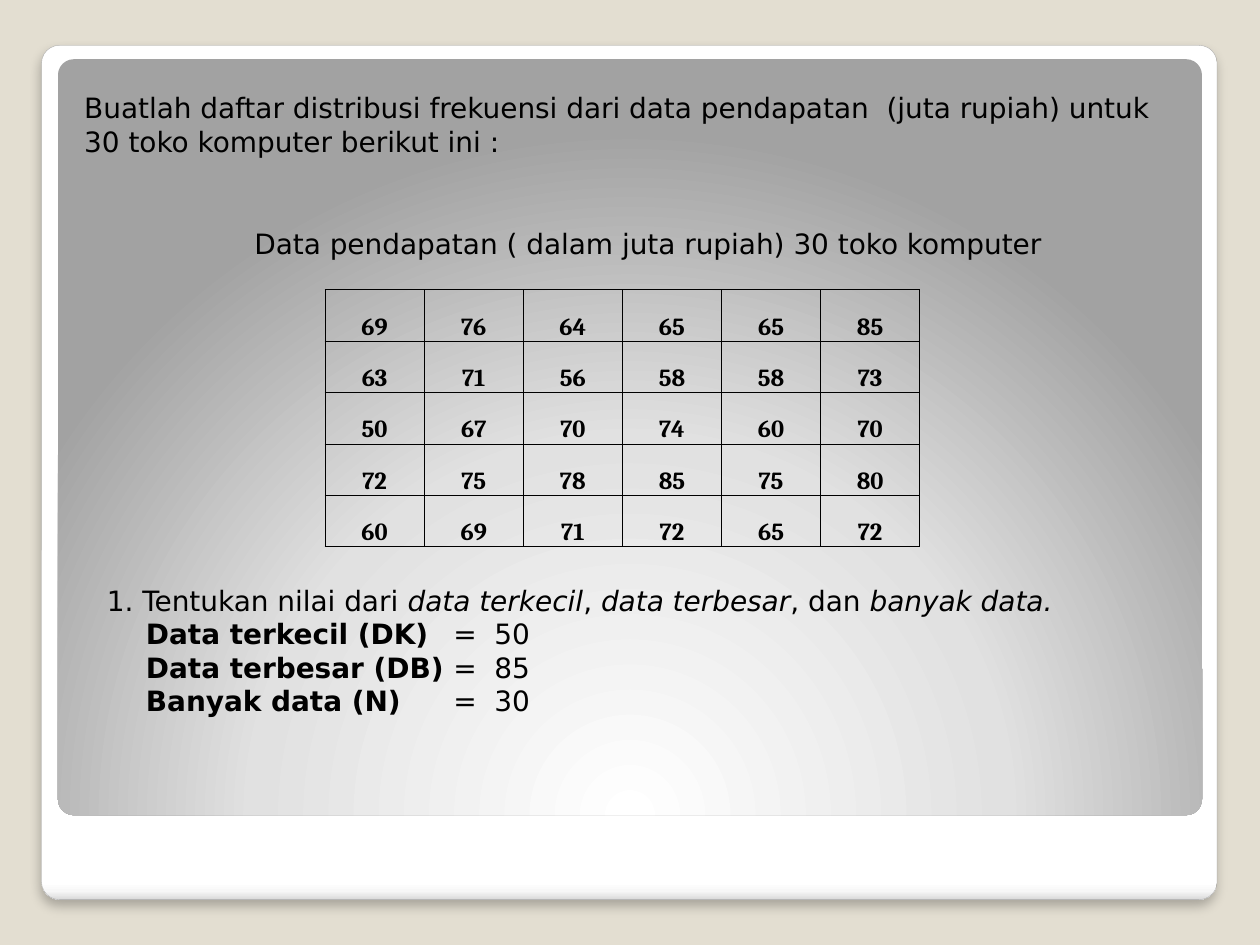
from pptx import Presentation
from pptx.dml.color import RGBColor
from pptx.enum.shapes import MSO_SHAPE
from pptx.enum.text import MSO_ANCHOR, PP_ALIGN
from pptx.oxml import parse_xml
from pptx.oxml.ns import nsdecls
from pptx.util import Inches, Pt

WIDTH, HEIGHT = 10, 7.5
BODY_FONT, TABLE_FONT = "DejaVu Sans", "Cambria"
BLACK = "000000"

INCOMES = [
    [69, 76, 64, 65, 65, 85],
    [63, 71, 56, 58, 58, 73],
    [50, 67, 70, 74, 60, 70],
    [72, 75, 78, 85, 75, 80],
    [60, 69, 71, 72, 65, 72],
]
COLUMN_WIDTH, ROW_HEIGHT = 4.72 / 6, 2.04 / 5

# Each line is a list of (text, style) spans
INTRO = [
    [("Buatlah daftar distribusi frekuensi dari data pendapatan  (juta rupiah) untuk", "")],
    [("30 toko komputer berikut ini :", "")],
]
CAPTION = [[("Data pendapatan ( dalam juta rupiah) 30 toko komputer", "")]]
QUESTION = [
    ("1. Tentukan nilai dari ", ""),
    ("data terkecil", "italic"),
    (", ", ""),
    ("data terbesar", "italic"),
    (", dan ", ""),
    ("banyak data.", "italic"),
]
ANSWERS = [("Data terkecil (DK)", 50), ("Data terbesar (DB)", 85), ("Banyak data (N)", 30)]
ANSWER_TABS = (0.31, 2.75)


def color(hex_text):
    return RGBColor.from_string(hex_text)


def add_xml(parent, markup):
    """Append a drawing element, given without its namespace."""
    head, rest = markup.split(" ", 1)
    parent.append(parse_xml(f"{head} {nsdecls('a')} {rest}"))


def add_panel(slide, left, top, width, height, stops, direction):
    """Rounded panel with a gradient; stops are (percent, colour)."""
    panel = slide.shapes.add_shape(
        MSO_SHAPE.ROUNDED_RECTANGLE,
        Inches(left), Inches(top), Inches(width), Inches(height))
    panel.adjustments[0] = 0.021
    marks = "".join(
        f'<a:gs pos="{percent * 1000}"><a:srgbClr val="{tone}"/></a:gs>'
        for percent, tone in stops)
    add_xml(panel._element.spPr,
            f'<a:gradFill rotWithShape="1"><a:gsLst>{marks}</a:gsLst>{direction}</a:gradFill>')
    panel.line.fill.background()
    panel.shadow.inherit = False
    return panel


def add_frame(slide):
    """White outer card with a thin edge and a soft shadow below."""
    frame = add_panel(
        slide, 0.33, 0.36, 9.33, 6.78,
        [(0, "FFFFFF"), (98, "FFFFFF"), (99, "F7F7F7"), (100, "DADADA")],
        '<a:lin ang="5400000" scaled="0"/>')
    frame.line.color.rgb = color("A4A4A4")
    frame.line.width = Pt(0.16)
    effects = frame._element.spPr[-1]
    add_xml(effects,
            f'<a:outerShdw blurRad="{Pt(6)}" dist="{Pt(4)}" dir="5400000" '
            f'algn="tl" rotWithShape="0"><a:srgbClr val="{BLACK}">'
            '<a:alpha val="25000"/></a:srgbClr></a:outerShdw>')


def add_text(slide, left, top, width, height, lines, tabs=()):
    box = slide.shapes.add_textbox(
        Inches(left), Inches(top), Inches(width), Inches(height))
    frame = box.text_frame
    frame.word_wrap = True
    for index, spans in enumerate(lines):
        para = frame.paragraphs[0] if index == 0 else frame.add_paragraph()
        if tabs:
            stops = "".join(f'<a:tab pos="{Inches(tab)}" algn="l"/>' for tab in tabs)
            add_xml(para._p.get_or_add_pPr(), f"<a:tabLst >{stops}</a:tabLst>")
        para.font.name = BODY_FONT
        para.font.size = Pt(16)
        para.font.color.rgb = color(BLACK)
        for text, style in spans:
            span = para.add_run()
            span.text = text
            if style == "bold":
                span.font.bold = True
            elif style == "italic":
                span.font.italic = True


def style_cell(cell, value):
    cell.margin_left = cell.margin_right = cell.margin_top = Inches(0.01)
    cell.margin_bottom = 0
    cell.vertical_anchor = MSO_ANCHOR.BOTTOM
    for side in ("lnL", "lnR", "lnT", "lnB"):
        add_xml(cell._tc.get_or_add_tcPr(),
                f'<a:{side} w="{Pt(0.5)}"><a:solidFill><a:srgbClr val="{BLACK}"/>'
                f"</a:solidFill></a:{side}>")
    cell.fill.background()
    cell.text = str(value)
    para = cell.text_frame.paragraphs[0]
    para.alignment = PP_ALIGN.CENTER
    para.font.name = TABLE_FONT
    para.font.size = Pt(14)
    para.font.bold = True
    para.font.color.rgb = color(BLACK)


def add_data_table(slide, left, top, rows):
    row_count, column_count = len(rows), len(rows[0])
    table = slide.shapes.add_table(
        row_count, column_count, Inches(left), Inches(top),
        Inches(column_count * COLUMN_WIDTH), Inches(row_count * ROW_HEIGHT)).table
    table.first_row = table.horz_banding = False
    for row_index, row in enumerate(rows):
        for column_index, value in enumerate(row):
            style_cell(table.cell(row_index, column_index), value)


def main():
    deck = Presentation()
    deck.slide_width, deck.slide_height = Inches(WIDTH), Inches(HEIGHT)
    slide = deck.slides.add_slide(deck.slide_layouts[6])

    # Background and panels
    slide.background.fill.solid()
    slide.background.fill.fore_color.rgb = color("E3DED1")
    add_frame(slide)
    add_panel(
        slide, 0.46, 0.47, 9.08, 6,
        [(0, "FFFFFF"), (55, "E1E1E1"), (100, "A2A2A2")],
        '<a:path path="circle"><a:fillToRect l="50000" t="175000" '
        'r="50000" b="-75000"/></a:path>')

    # Task and data
    add_data_table(slide, 2.58, 2.3, INCOMES)
    add_text(slide, 0.57, 0.67, 8.93, 1.25, INTRO)
    add_text(slide, 1.92, 1.75, 6.61, 0.37, CAPTION)

    # First question with its answers
    answers = [[(f"\t{label}", "bold"), (f"\t=  {value}", "")] for label, value in ANSWERS]
    add_text(slide, 0.75, 4.58, 7.88, 1.48, [QUESTION] + answers, ANSWER_TABS)

    deck.save("out.pptx")


if __name__ == "__main__":
    main()
